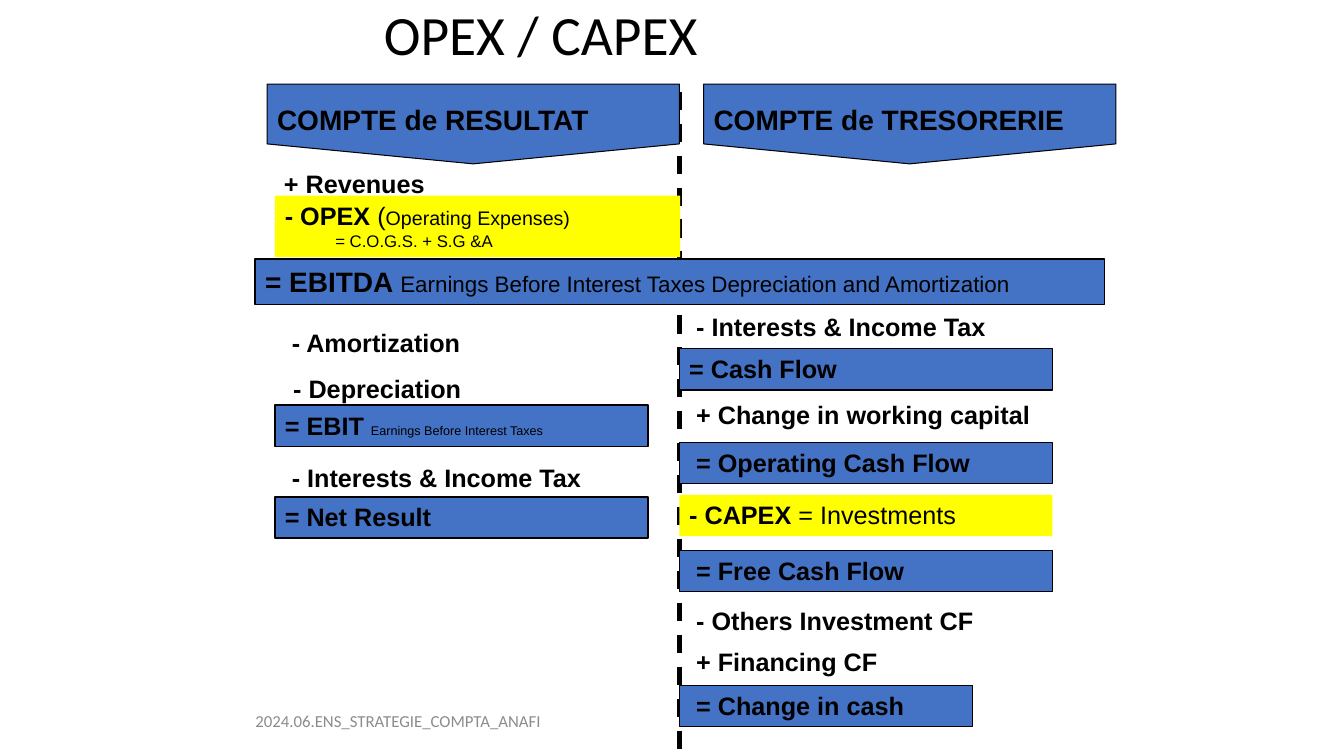
import pptx
import pptx.dml.color
import pptx.enum.dml
import pptx.enum.shapes
import pptx.enum.text
import pptx.oxml.ns
import pptx.util
from lxml import etree

Cm = pptx.util.Cm
Pt = pptx.util.Pt
ALIGN = pptx.enum.text.PP_ALIGN
ANCHOR = pptx.enum.text.MSO_ANCHOR
SHAPE = pptx.enum.shapes.MSO_SHAPE

BLACK, BLUE, YELLOW, GREY = "000000", "4472C4", "FFFF00", "8C8C8C"
LEFT_COLUMN = 6.93
RIGHT_COLUMN = 17.12
BOX_WIDTH = 9.4
ROW_HEIGHT = 1.04


def color(hex_string):
    return pptx.dml.color.RGBColor.from_string(hex_string)


class StatementSlide:
    """Holds the style and the slide being built."""

    font_name = "Arial"
    text_size = 18

    def __init__(self, presentation):
        self.slide = presentation.slides.add_slide(presentation.slide_layouts[5])

    def format_run(self, run, size, bold, font_name=None, hex_color=BLACK):
        run.font.name = font_name or self.font_name
        run.font.size = Pt(size)
        run.font.bold = bold
        run.font.color.rgb = color(hex_color)

    def add_parts(self, paragraph, parts):
        """Add parts given as (text, size, bold)."""
        paragraph.alignment = ALIGN.LEFT
        for text, size, bold in parts:
            run = paragraph.add_run()
            run.text = text
            self.format_run(run, size, bold)

    def title(self, text):
        title = self.slide.shapes.title
        title.left, title.top = Cm(9.42), Cm(0.08)
        title.width, title.height = Cm(22.23), Cm(1.73)
        frame = title.text_frame
        frame.text = text
        frame.auto_size = pptx.enum.text.MSO_AUTO_SIZE.NONE
        frame.vertical_anchor = ANCHOR.MIDDLE
        paragraph = frame.paragraphs[0]
        paragraph.alignment = ALIGN.LEFT
        paragraph.line_spacing = 0.9
        self.format_run(paragraph.runs[0], 39.6, False, "Calibri")

    def divider(self, x, top, bottom):
        line = self.slide.shapes.add_connector(
            pptx.enum.shapes.MSO_CONNECTOR.STRAIGHT, Cm(x), Cm(top), Cm(x), Cm(bottom))
        line.line.color.rgb = color(BLACK)
        line.line.width = Pt(3.25)
        line.line.dash_style = pptx.enum.dml.MSO_LINE.DASH
        etree.SubElement(line._element.spPr, pptx.oxml.ns.qn("a:effectLst"))

    def filled_shape(self, kind, left, top, width, height, fill, line_width):
        shape = self.slide.shapes.add_shape(kind, Cm(left), Cm(top), Cm(width), Cm(height))
        shape.shadow.inherit = False
        shape.fill.solid()
        shape.fill.fore_color.rgb = color(fill)
        if line_width:
            shape.line.color.rgb = color(BLACK)
            shape.line.width = Pt(line_width)
        else:
            shape.line.fill.background()
        shape.text_frame.word_wrap = True
        return shape

    def box(self, left, top, parts, fill=BLUE, line_width=1.0,
            width=BOX_WIDTH, height=ROW_HEIGHT):
        shape = self.filled_shape(SHAPE.RECTANGLE, left, top, width, height, fill, line_width)
        shape.text_frame.vertical_anchor = ANCHOR.TOP
        self.add_parts(shape.text_frame.paragraphs[0], parts)
        return shape

    def detail(self, shape, parts):
        paragraph = shape.text_frame.add_paragraph()
        paragraph.level = 1
        self.add_parts(paragraph, parts)
        paragraph._p.get_or_add_pPr().set("marL", str(Cm(1.27)))

    def label(self, left, top, width, text):
        shape = self.slide.shapes.add_textbox(Cm(left), Cm(top), Cm(width), Cm(ROW_HEIGHT))
        shape.text_frame.word_wrap = False
        self.add_parts(shape.text_frame.paragraphs[0], [(text, self.text_size, True)])

    def banner(self, left, top, width, height, text):
        """Pentagon pointing down, with its text kept horizontal."""
        shape = self.filled_shape(
            SHAPE.PENTAGON, left + (width - height) / 2, top + (height - width) / 2,
            height, width, BLUE, 0.75)
        shape.rotation = 90
        shape.adjustments[0] = 0.25
        frame = shape.text_frame
        frame.vertical_anchor = ANCHOR.MIDDLE
        frame._txBody.bodyPr.set("vert", "vert270")
        self.add_parts(frame.paragraphs[0], [(text, 20, True)])

    def footer(self, text):
        shape = self.slide.shapes.add_textbox(Cm(4.32), Cm(17.65), Cm(11.43), Cm(1.02))
        frame = shape.text_frame
        frame.word_wrap = True
        frame.vertical_anchor = ANCHOR.MIDDLE
        frame.text = text
        frame.paragraphs[0].alignment = ALIGN.CENTER
        self.format_run(frame.paragraphs[0].runs[0], 12, False, "Calibri", GREY)


def main():
    presentation = pptx.Presentation()
    presentation.slide_width, presentation.slide_height = Cm(33.87), Cm(19.05)
    page = StatementSlide(presentation)

    # Title and column divider
    page.divider(RIGHT_COLUMN, 2.31, 19.05)
    page.title("OPEX / CAPEX")

    # Column headings
    for left, heading in ((6.73, "COMPTE de RESULTAT"), (17.73, "COMPTE de TRESORERIE")):
        page.banner(left, 2.12, 10.39, 2.01, heading)

    # Operating expenses and EBITDA
    opex = page.box(LEFT_COLUMN, 4.93,
                    [("- OPEX ", 18, True), ("(", 18, False),
                     ("Operating Expenses)", 14, False)],
                    YELLOW, 0, 10.21, 1.55)
    page.detail(opex, [("= C.O.G.S. + S.G &A", 12, False)])
    page.box(6.43, 6.53,
             [("= EBITDA ", 20, True),
              ("Earnings Before Interest Taxes Depreciation and Amortization", 16, False)],
             width=21.41, height=1.14)

    # Results of the income statement
    page.box(LEFT_COLUMN, 10.21,
             [("= EBIT ", 18, True), ("Earnings Before Interest Taxes", 9, False)])
    page.box(LEFT_COLUMN, 12.52, [("= Net Result", 18, True)])

    # Results of the cash statement
    page.box(RIGHT_COLUMN, 8.79, [("= Cash Flow", 18, True)])
    page.box(RIGHT_COLUMN, 12.47,
             [("- CAPEX ", 18, True), ("= Investments", 18, False)], YELLOW, 0)
    for top, width, text in (
            (11.15, BOX_WIDTH, " = Operating Cash Flow"),
            (13.87, BOX_WIDTH, " = Free Cash Flow"),
            (17.27, 7.39, " = Change in cash")):
        page.box(RIGHT_COLUMN, top, [(text, 18, True)], line_width=0.75, width=width)

    # Items added or deducted between the results
    for left, top, width, text in (
            (6.73, 4.11, 4.27, " + Revenues"),
            (LEFT_COLUMN, 8.13, 4.98, " - Amortization"),
            (7.14, 9.27, 4.78, "- Depreciation"),
            (LEFT_COLUMN, 11.53, 8.05, " - Interests & Income Tax"),
            (RIGHT_COLUMN, 7.72, 8.05, " - Interests & Income Tax"),
            (RIGHT_COLUMN, 9.93, 9.2, " + Change in working capital"),
            (RIGHT_COLUMN, 15.14, 7.75, " - Others Investment CF"),
            (RIGHT_COLUMN, 16.15, 5.31, " + Financing CF")):
        page.label(left, top, width, text)

    page.footer("2024.06.ENS_STRATEGIE_COMPTA_ANAFI")
    presentation.save("out.pptx")


if __name__ == "__main__":
    main()
